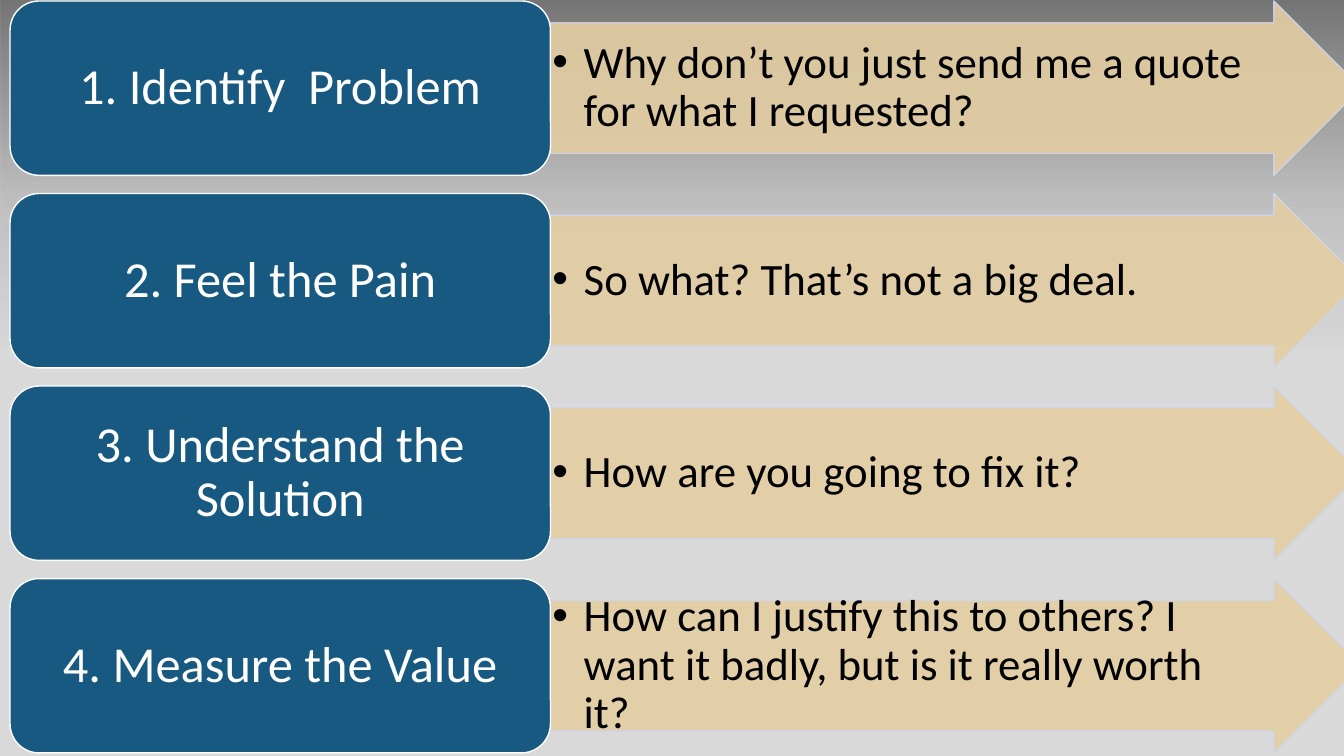
from dataclasses import dataclass

from lxml.etree import SubElement
from pptx import Presentation
from pptx.dml.color import RGBColor
from pptx.enum.shapes import MSO_SHAPE
from pptx.enum.text import MSO_ANCHOR, PP_ALIGN
from pptx.oxml.ns import qn
from pptx.util import Inches, Pt

BLACK = RGBColor(0x00, 0x00, 0x00)
WHITE = RGBColor(0xFF, 0xFF, 0xFF)
GREY = RGBColor(0xD9, 0xD9, 0xD9)
BLUE = RGBColor(0x17, 0x59, 0x80)
SAND = RGBColor(0xE3, 0xCE, 0xA3)
PALE = RGBColor(0xCF, 0xD5, 0xEA)

SLIDE_W, SLIDE_H = 13.33, 7.5

# Grid: two columns, four rows
LABEL_X, LABEL_W = 0.1, 5.36
ARROW_X, ARROW_W = LABEL_X + LABEL_W, 8.04
ROW_TOP, ROW_PITCH, ROW_H = 0.01, 1.91, 1.73


@dataclass(frozen=True)
class Step:
    label: str
    objection: str


@dataclass(frozen=True)
class Style:
    fill: RGBColor
    line: RGBColor
    opacity: int
    margins: tuple[float, float, float, float]  # left, top, right, bottom
    align: PP_ALIGN
    font: dict


LABEL_STYLE = Style(BLUE, WHITE, 100, (0.15, 0.07, 0.15, 0.07), PP_ALIGN.CENTER,
                    {"name": "Calibri", "size": Pt(36)})
ARROW_STYLE = Style(SAND, PALE, 90, (0.02, 0.02, 0.45, 0.02), PP_ALIGN.LEFT,
                    {"name": "Calibri", "size": Pt(32)})

STEPS = [
    Step("1. Identify  Problem", "Why don’t you just send me a quote for what I requested?"),
    Step("2. Feel the Pain", "So what? That’s not a big deal."),
    Step("3. Understand the Solution", "How are you going to fix it?"),
    Step("4. Measure the Value",
         "How can I justify this to others? I want it badly, but is it really worth it?"),
]


def set_opacity(sp, percent: int) -> None:
    for clr in sp._element.spPr.iter(qn("a:srgbClr")):
        SubElement(clr, qn("a:alpha"), val=str(percent * 1000))


def add_bullet(p, indent: float) -> None:
    pPr = p._p.get_or_add_pPr()
    pPr.set("marL", str(Inches(indent)))
    pPr.set("indent", str(-Inches(indent)))
    SubElement(pPr, qn("a:buFont"), typeface="Arial")
    SubElement(pPr, qn("a:buChar"), char="•")


def add_box(s, kind: MSO_SHAPE, x: float, y: float, w: float, text: str,
            style: Style, color: RGBColor):
    sp = s.shapes.add_shape(kind, Inches(x), Inches(y), Inches(w), Inches(ROW_H))
    sp.shadow.inherit = False
    sp.fill.solid()
    sp.fill.fore_color.rgb = style.fill
    sp.line.color.rgb = style.line
    sp.line.width = Pt(1)
    if style.opacity < 100:
        set_opacity(sp, style.opacity)
    tf = sp.text_frame
    tf.word_wrap = True
    tf.vertical_anchor = MSO_ANCHOR.MIDDLE
    for side, margin in zip(("left", "top", "right", "bottom"), style.margins):
        setattr(tf, f"margin_{side}", Inches(margin))
    p = tf.paragraphs[0]
    p.alignment = style.align
    p.line_spacing = 0.9
    r = p.add_run()
    r.text = text
    for name, value in style.font.items():
        setattr(r.font, name, value)
    r.font.color.rgb = color
    return sp


def add_shade(s) -> None:
    """Dark band that fades downwards over the top half of the slide."""
    depth, length = 3.84, SLIDE_W
    sp = s.shapes.add_shape(MSO_SHAPE.RECTANGLE, Inches((SLIDE_W - depth) / 2),
                            Inches((depth - length) / 2), Inches(depth), Inches(length))
    sp.rotation = 90
    sp.shadow.inherit = False
    sp.line.fill.background()
    sp.fill.gradient()
    sp.fill.gradient_angle = 180
    stops = sp._element.spPr.find(".//" + qn("a:gsLst"))
    for gs in list(stops):
        stops.remove(gs)
    for position, opacity in ((10, 0), (49, 12), (100, 46)):
        gs = SubElement(stops, qn("a:gs"), pos=str(position * 1000))
        clr = SubElement(gs, qn("a:srgbClr"), val=str(BLACK))
        SubElement(clr, qn("a:alpha"), val=str(opacity * 1000))


def add_step(s, row: int, step: Step) -> None:
    y = ROW_TOP + row * ROW_PITCH
    arrow = add_box(s, MSO_SHAPE.RIGHT_ARROW, ARROW_X, y, ARROW_W,
                    step.objection, ARROW_STYLE, BLACK)
    arrow.adjustments[0] = 0.75
    arrow.adjustments[1] = 0.5
    p = arrow.text_frame.paragraphs[0]
    p.level = 1
    add_bullet(p, 0.31)
    add_box(s, MSO_SHAPE.ROUNDED_RECTANGLE, LABEL_X, y, LABEL_W,
            step.label, LABEL_STYLE, WHITE)


def main() -> None:
    prs = Presentation()
    prs.slide_width, prs.slide_height = Inches(SLIDE_W), Inches(SLIDE_H)
    s = prs.slides.add_slide(prs.slide_layouts[6])

    # Background
    s.background.fill.solid()
    s.background.fill.fore_color.rgb = GREY
    add_shade(s)

    # Steps with the objection each one meets
    for row, step in enumerate(STEPS):
        add_step(s, row, step)

    prs.save("out.pptx")


if __name__ == "__main__":
    main()
